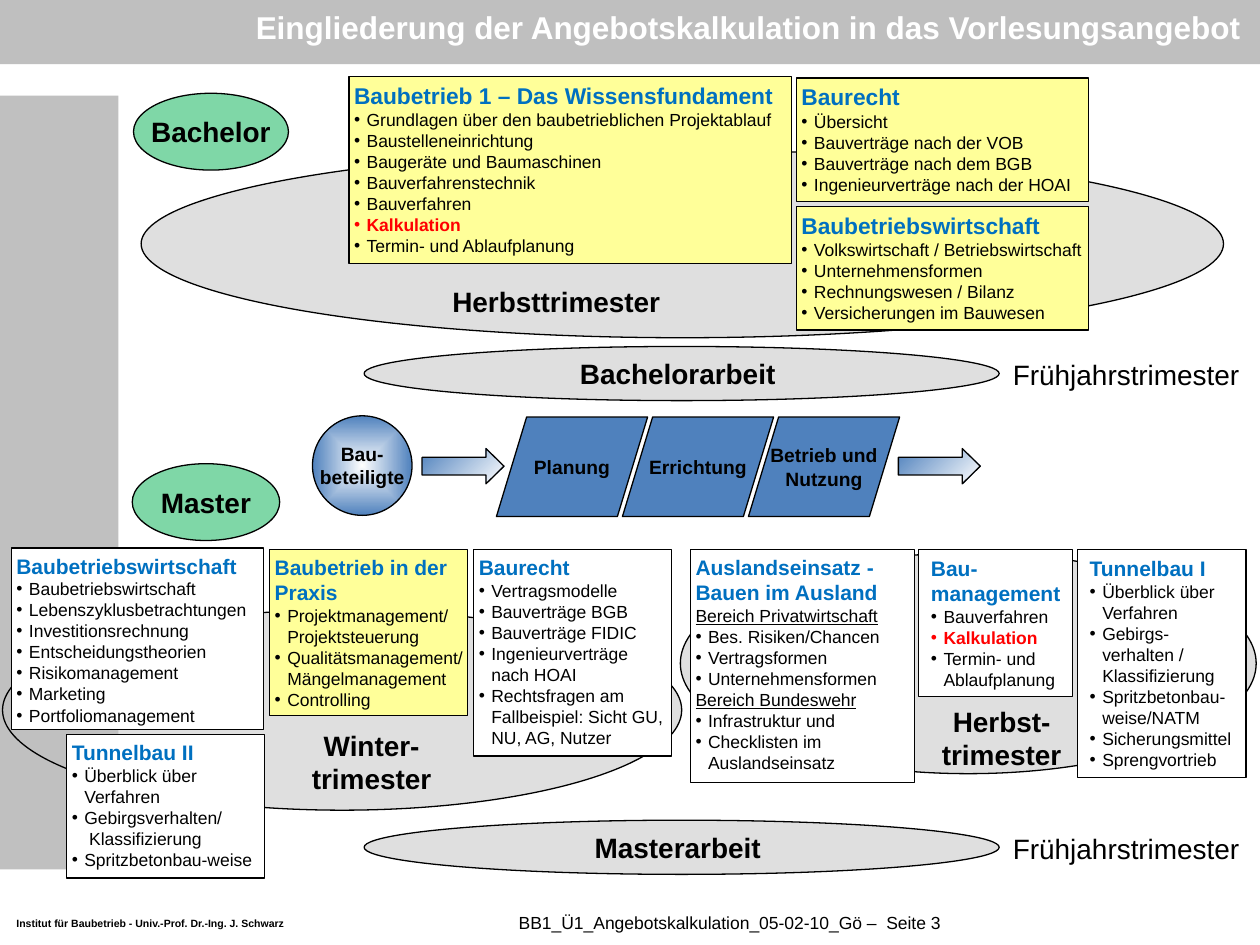
"""Build the slide that places bid costing within the lecture programme."""
from pptx import Presentation
from pptx.dml.color import RGBColor
from pptx.enum.shapes import MSO_SHAPE as SHAPE
from pptx.enum.text import MSO_ANCHOR as ANCHOR, PP_ALIGN as ALIGN
from pptx.oxml import parse_xml
from pptx.oxml.ns import nsdecls, qn
from pptx.util import Inches, Pt
from lxml.etree import SubElement

BLACK, WHITE, GREY, SIDE = "000000", "FFFFFF", "C0C0C0", "BFBFBF"
HEAD, RED, YELLOW, GREEN, BLUE = "0070C0", "FF0000", "FFFF99", "00B050", "4F81BD"

prs = Presentation()
prs.slide_width, prs.slide_height = Inches(10), Inches(7.5)
COL, ROW = prs.slide_width / 100, prs.slide_height / 75
s = prs.slides.add_slide(prs.slide_layouts[6])


def add(kind, box, fill=None, alpha=None, line=True):
    """Place a shape, or a text box when kind is None, on the 100 by 75 grid."""
    x, y, w, h = box
    place = [int(v) for v in (x * COL, y * ROW, w * COL, h * ROW)]
    if kind is None:
        return s.shapes.add_textbox(*place)
    sp = s.shapes.add_shape(kind, *place)
    sp.shadow.inherit = False
    if isinstance(fill, tuple):
        sp.fill.gradient()
        for stop, color in zip(sp.fill.gradient_stops, fill):
            stop.color.rgb = RGBColor.from_string(color)
    else:
        sp.fill.solid()
        sp.fill.fore_color.rgb = RGBColor.from_string(fill)
    if alpha:
        color = sp._element.spPr.find(qn("a:solidFill"))[0]
        SubElement(color, qn("a:alpha")).set("val", str(alpha * 1000))
    if line:
        sp.line.color.rgb = RGBColor.from_string(BLACK)
        sp.line.width = Pt(0.75)
    else:
        sp.line.fill.background()
    return sp


def write(sp, lines, size, color=BLACK, bold=True, align=ALIGN.CENTER,
          anchor=ANCHOR.MIDDLE, inset=(0.1, 0.05, 0.1), wrap=False):
    """Fill a shape; a line led by -, ! or _ is a bullet, red bullet or underlined."""
    tf = sp.text_frame
    tf.word_wrap, tf.vertical_anchor = wrap, anchor
    left, top, right = inset
    tf.margin_left, tf.margin_right = Inches(left), Inches(right)
    tf.margin_top = tf.margin_bottom = Inches(top)
    for i, line in enumerate(lines):
        p = tf.add_paragraph() if i else tf.paragraphs[0]
        mark = line[0] if line[0] in "-!_" else ""
        p.text = line[len(mark):]
        p.alignment = align
        if mark in ("-", "!"):
            pPr = p._p.get_or_add_pPr()
            pPr.set("marL", str(Inches(0.1)))
            pPr.set("indent", str(-Inches(0.1)))
            SubElement(pPr, qn("a:buFont")).set("typeface", "Arial")
            SubElement(pPr, qn("a:buChar")).set("char", "•")
        for r in p.runs:
            r.font.name = "Arial"
            r.font.size = Pt(10 if mark else size)
            r.font.bold = mark == "!" or (bold and not mark)
            r.font.underline = mark == "_"
            r.font.color.rgb = RGBColor.from_string({"": color, "!": RED}.get(mark, BLACK))


add(SHAPE.RECTANGLE, (0, 0, 100, 5.1), SIDE, line=False)
add(SHAPE.RECTANGLE, (0, 7.6, 9.4, 61.4), GREY, line=False)
write(add(None, (20.1, 0.4, 79.5, 3.4)),
      ["Eingliederung der Angebotskalkulation in das Vorlesungsangebot"],
      18, WHITE, align=ALIGN.LEFT, inset=(0.02, 0.02, 0.02), wrap=True)
write(add(None, (1.3, 72.8, 21.5, 1)),
      ["Institut für Baubetrieb - Univ.-Prof. Dr.-Ing. J. Schwarz"],
      6, align=ALIGN.LEFT, inset=(0, 0, 0))
write(add(None, (27.6, 71.7, 60.6, 3.1)),
      ["BB1_Ü1_Angebotskalkulation_05-02-10_Gö –  Seite 3"],
      10, bold=False, inset=(0.1, 0, 0.1), wrap=True)

for box in [(0.2, 48.4, 53.9, 15.9), (11.2, 11.9, 85.9, 14.9), (54, 43.9, 45.7, 17.5)]:
    add(SHAPE.OVAL, box, GREY, 50)

for thesis, y in [("Bachelorarbeit ", 27.5), ("Masterarbeit ", 65.1)]:
    write(add(SHAPE.OVAL, (28.9, y, 50.4, 4.3), GREY, 50), [thesis], 16)
    write(add(None, (79.4, y + 0.4, 20.1, 3.7)), ["Frühjahrstrimester"], 16,
          bold=False, align=ALIGN.LEFT, anchor=ANCHOR.TOP)

for degree, box in [("Bachelor", (10.6, 7.4, 12.3, 6.1)), ("Master", (10.5, 36.8, 11.7, 6.1))]:
    write(add(SHAPE.OVAL, box, GREEN, 50), [degree], 16)

NARROW, TIGHT, WIDE = (0.04, 0.04, 0.02), (0.1, 0.05, 0.02), (0.1, 0.05, 0.1)
cards = [
    ((27.7, 6.1, 35.1, 14.8), YELLOW, 13, NARROW, [
        "Baubetrieb 1 – Das Wissensfundament",
        "-Grundlagen über den baubetrieblichen Projektablauf", "-Baustelleneinrichtung",
        "-Baugeräte und Baumaschinen", "-Bauverfahrenstechnik", "-Bauverfahren",
        "!Kalkulation", "-Termin- und Ablaufplanung"]),
    ((63.2, 6.2, 23.2, 9.8), YELLOW, 13, NARROW, [
        "Baurecht", "-Übersicht", "-Bauverträge nach der VOB",
        "-Bauverträge nach dem BGB", "-Ingenieurverträge nach der HOAI"]),
    ((63.2, 16.4, 23.2, 9.8), YELLOW, 13, NARROW, [
        "Baubetriebswirtschaft", "-Volkswirtschaft / Betriebswirtschaft",
        "-Unternehmensformen", "-Rechnungswesen / Bilanz", "-Versicherungen im Bauwesen"]),
    ((0.9, 43.5, 20, 14.4), WHITE, 12, NARROW, [
        "Baubetriebswirtschaft", "-Baubetriebswirtschaft", "-Lebenszyklusbetrachtungen",
        "-Investitionsrechnung", "-Entscheidungstheorien", "-Risikomanagement",
        "-Marketing", "-Portfoliomanagement"]),
    ((5.3, 58.3, 15.7, 11.4), WHITE, 12, NARROW, [
        "Tunnelbau II", "-Überblick über Verfahren",
        "-Gebirgsverhalten/\n Klassifizierung", "-Spritzbetonbau-weise"]),
    ((21.4, 43.6, 15.7, 13.2), YELLOW, 12, NARROW, [
        "Baubetrieb in der Praxis", "-Projektmanagement/\nProjektsteuerung",
        "-Qualitätsmanagement/ Mängelmanagement", "-Controlling"]),
    ((37.6, 43.6, 15.7, 16.4), WHITE, 12, NARROW, [
        "Baurecht", "-Vertragsmodelle", "-Bauverträge BGB", "-Bauverträge FIDIC",
        "-Ingenieurverträge \nnach HOAI",
        "-Rechtsfragen am \nFallbeispiel: Sicht GU, NU, AG, Nutzer"]),
    ((54.8, 43.6, 17.8, 18.5), WHITE, 12, NARROW, [
        "Auslandseinsatz -", "Bauen im Ausland", "_Bereich Privatwirtschaft",
        "-Bes. Risiken/Chancen", "-Vertragsformen", "-Unternehmensformen",
        "_Bereich Bundeswehr", "-Infrastruktur und", "-Checklisten im Auslandseinsatz"]),
    ((72.9, 43.6, 12.2, 11.7), WHITE, 12, TIGHT, [
        "Bau-", "management", "-Bauverfahren", "!Kalkulation", "-Termin- und Ablaufplanung"]),
    ((85.5, 43.6, 13.4, 18.1), WHITE, 12, WIDE, [
        "Tunnelbau I", "-Überblick über Verfahren", "-Gebirgs-verhalten / Klassifizierung",
        "-Spritzbetonbau-weise/NATM", "-Sicherungsmittel", "-Sprengvortrieb"]),
]
for box, fill, size, inset, lines in cards:
    write(add(SHAPE.RECTANGLE, box, fill), lines, size, HEAD, align=ALIGN.LEFT,
          anchor=ANCHOR.TOP, inset=inset, wrap=True)

terms = [
    ((34.8, 22.1, 18.7, 3.7), ["Herbsttrimester"]),
    ((23.7, 57.3, 11.6, 6.3), ["Winter-", "trimester"]),
    ((73.7, 55.4, 11.6, 6.3), ["Herbst-", "trimester"]),
]
for box, lines in terms:
    write(add(None, box), lines, 16, anchor=ANCHOR.TOP)

sp = add(SHAPE.OVAL, (24.8, 33, 7.9, 7.9), (WHITE, BLUE))
grad = sp._element.spPr.find(qn("a:gradFill"))
grad.replace(grad.find(qn("a:lin")), parse_xml(
    f'<a:path {nsdecls("a")} path="shape">'
    '<a:fillToRect l="50000" t="50000" r="50000" b="50000"/></a:path>'))
write(sp, ["Bau-", "beteiligte"], 11)

phases = [["Planung"], ["Errichtung"], ["Betrieb und", "Nutzung"]]
for i, lines in enumerate(phases):
    write(add(SHAPE.FLOWCHART_DATA, (39.4 + 10 * i, 33.1, 12, 7.9), BLUE), lines, 11)

for x in (33.5, 71.3):
    sp = add(SHAPE.RIGHT_ARROW, (x, 35.6, 6.5, 2.8), (BLUE, WHITE))
    sp.fill.gradient_angle = 315
    sp.adjustments[1] = 0.51

prs.save("out.pptx")
